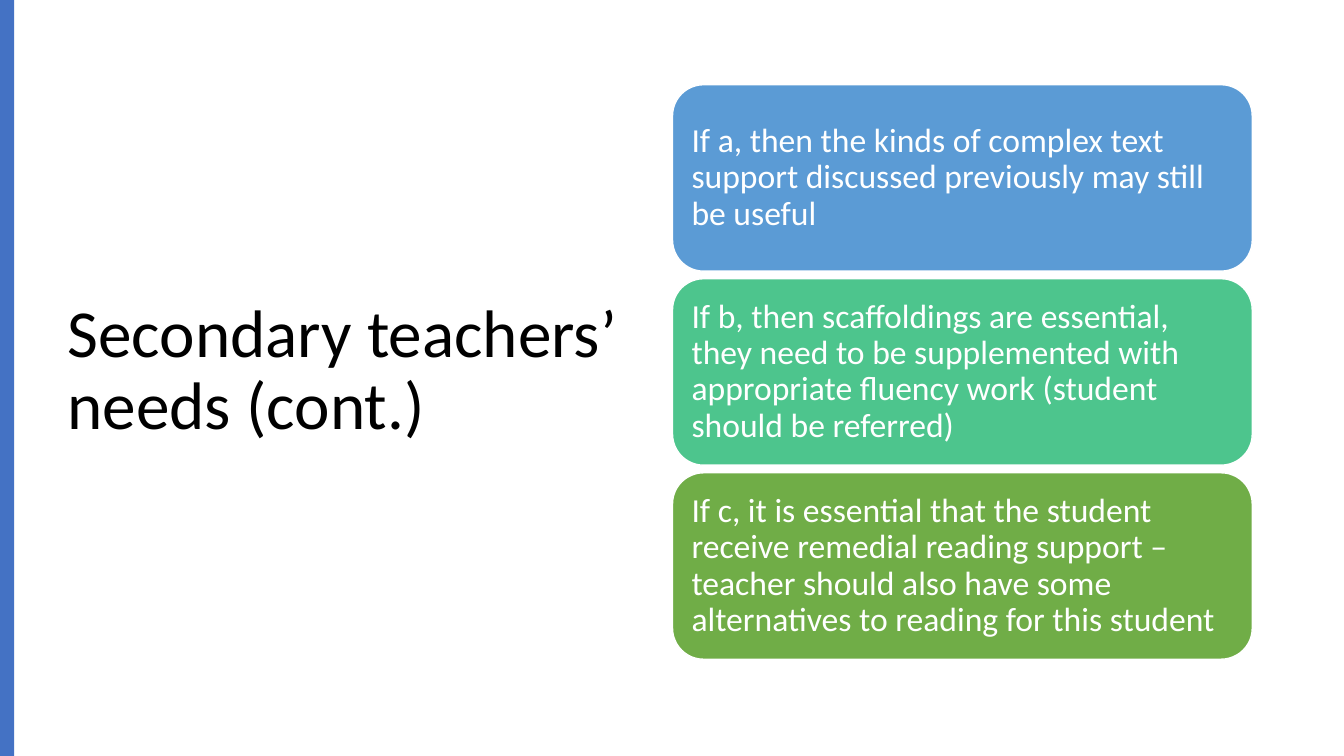
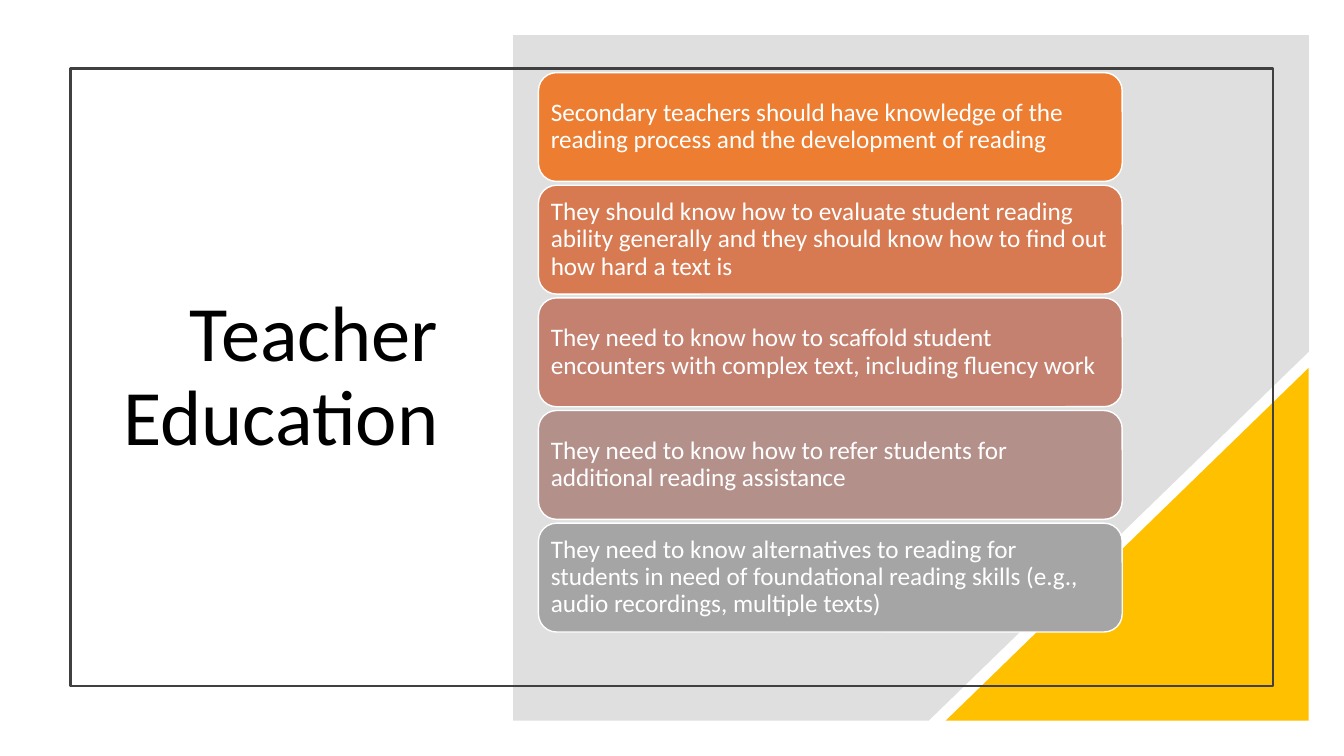
from lxml import etree
from pptx import Presentation
from pptx.dml.color import RGBColor
from pptx.enum.shapes import MSO_SHAPE
from pptx.enum.text import MSO_ANCHOR, MSO_AUTO_SIZE, PP_ALIGN
from pptx.oxml.ns import qn
from pptx.util import Pt

RECT, ROUND, TRIANGLE = MSO_SHAPE.RECTANGLE, MSO_SHAPE.ROUNDED_RECTANGLE, MSO_SHAPE.RIGHT_TRIANGLE
LEFT, RIGHT = PP_ALIGN.LEFT, PP_ALIGN.RIGHT
MIDDLE, NO_FIT = MSO_ANCHOR.MIDDLE, MSO_AUTO_SIZE.NONE

# Shared look
PX = 9144  # 100 px to the inch
FONT = "Calibri"
BLACK, WHITE, BLUE, GOLD = "000000", "FFFFFF", "4472C4", "FFC000"
GREY, FRAME = "808080", "404040"

# Content: boxes are (fill, text), areas are left, top, width, height
NEEDS = {
    "title": "Secondary teachers’ needs (cont.)",
    "title_area": (57, 68, 567, 602), "title_size": 48, "align": LEFT,
    "stack": (667, 84, 575, 570), "box_height": 185, "inset": 10, "size": 24,
    "boxes": [
        ("5B9BD5", "If a, then the kinds of complex text support discussed previously "
                   "may still be useful"),
        ("4DC58D", "If b, then scaffoldings are essential, they need to be supplemented "
                   "with appropriate fluency work (student should be referred)"),
        ("70AD47", "If c, it is essential that the student receive remedial reading support – "
                   "teacher should also have some alternatives to reading for this student"),
    ],
}
EDUCATION = {
    "title": "Teacher Education",
    "title_area": (110, 130, 335, 490), "title_size": 56, "align": RIGHT,
    "stack": (534, 72, 579, 555), "box_height": 108, "inset": 7, "size": 18,
    "boxes": [
        ("ED7D31", "Secondary teachers should have knowledge of the reading process "
                   "and the development of reading"),
        ("D87A51", "They should know how to evaluate student reading ability generally "
                   "and they should know how to find out how hard a text is"),
        ("C48170", "They need to know how to scaffold student encounters with complex text, "
                   "including fluency work"),
        ("B4908B", "They need to know how to refer students for additional reading assistance"),
        ("A5A5A5", "They need to know alternatives to reading for students in need of "
                   "foundational reading skills (e.g., audio recordings, multiple texts)"),
    ],
}
PANEL = [(509, 35), (1298, 35), (1298, 349), (921, 715), (509, 715)]


def rgb(value):
    return RGBColor.from_string(value)


def px(*lengths):
    return [round(n * PX) for n in lengths]


def paint(sp, fill=None, line=None, width=1):
    sp.shadow.inherit = False
    if fill:
        sp.fill.solid()
        sp.fill.fore_color.rgb = rgb(fill)
    else:
        sp.fill.background()
    if line:
        sp.line.color.rgb = rgb(line)
        sp.line.width = Pt(width)
    else:
        sp.line.fill.background()


def add_box(s, kind, area, **look):
    sp = s.shapes.add_shape(kind, *px(*area))
    paint(sp, **look)
    return sp


def write(sp, text, size, color, align=LEFT, inset=10):
    tf = sp.text_frame
    tf.word_wrap, tf.auto_size, tf.vertical_anchor = True, NO_FIT, MIDDLE
    tf.margin_left = tf.margin_right = tf.margin_top = tf.margin_bottom = inset * PX
    p = tf.paragraphs[0]
    p.alignment, p.line_spacing = align, 0.9
    r = p.add_run()
    r.text = text
    r.font.name, r.font.size, r.font.color.rgb = FONT, Pt(size), rgb(color)


def add_titled_slide(prs, data):
    s = prs.slides.add_slide(prs.slide_layouts[5])
    title = s.shapes.title
    title.left, title.top, title.width, title.height = px(*data["title_area"])
    write(title, data["title"], data["title_size"], BLACK, data["align"])
    return s


def add_stack(s, data):
    """Spread the boxes evenly over the height of the stack."""
    left, top, width, height = data["stack"]
    box_height = data["box_height"]
    pitch = (height - box_height) / (len(data["boxes"]) - 1)
    for i, (fill, text) in enumerate(data["boxes"]):
        area = (left, top + i * pitch, width, box_height)
        sp = add_box(s, ROUND, area, fill=fill, line=WHITE)
        write(sp, text, data["size"], WHITE, inset=data["inset"])


def add_panel(s):
    builder = s.shapes.build_freeform(*PANEL[0], scale=PX)
    builder.add_line_segments(PANEL[1:], close=True)
    sp = builder.convert_to_shape()
    paint(sp, fill=GREY)
    color = sp._element.spPr.find(qn("a:solidFill"))[0]
    etree.SubElement(color, qn("a:alpha")).set("val", "25000")


def main():
    prs = Presentation()
    prs.slide_width, prs.slide_height = px(1333, 750)

    # Needs: side band and three boxes
    s = add_titled_slide(prs, NEEDS)
    add_box(s, RECT, (0, 0, 14, 750), fill=BLUE)
    add_stack(s, NEEDS)

    # Education: cut panel, corner triangle, frame and five boxes
    s = add_titled_slide(prs, EDUCATION)
    add_panel(s)
    corner = add_box(s, TRIANGLE, (938, 365, 360, 350), fill=GOLD)
    corner._element.spPr.find(qn("a:xfrm")).set("flipH", "1")
    add_box(s, RECT, (70, 68, 1193, 613), line=FRAME, width=1.5)
    add_stack(s, EDUCATION)

    prs.save("out.pptx")


if __name__ == "__main__":
    main()
